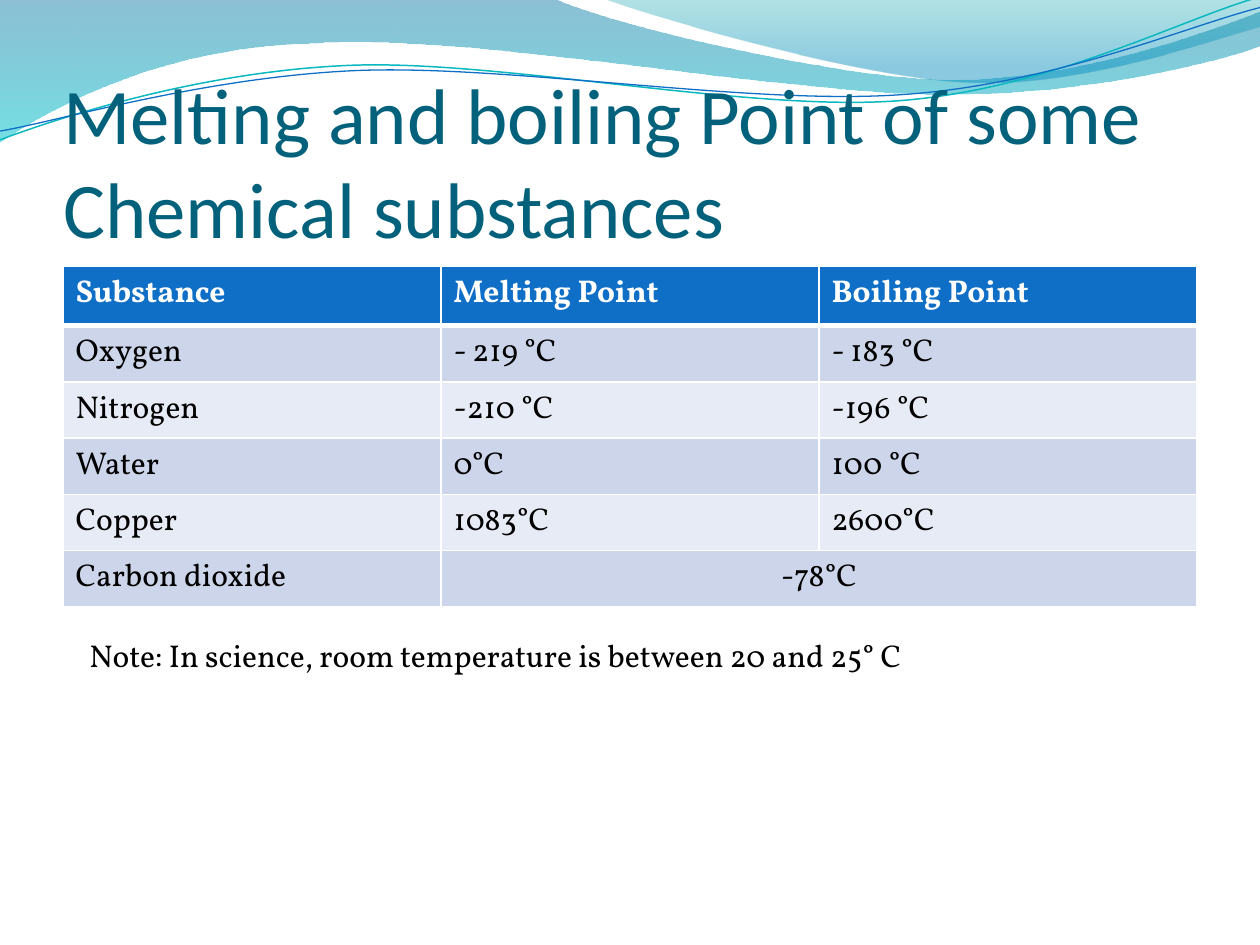
from pptx import Presentation
from pptx.dml.color import RGBColor
from pptx.enum.text import MSO_ANCHOR as ANCHOR, MSO_AUTO_SIZE as AUTO, PP_ALIGN as ALIGN
from pptx.oxml.ns import qn
from pptx.util import Pt
from lxml.etree import SubElement

COLORS = {
    "wave_blue": "0074A1", "wave_cyan": "00C6CF",
    "crest_teal": "00A1A9", "crest_blue": "008BBF",
    "teal_line": "0AB8BF", "blue": "0F6FC6", "title": "04617B",
    "band_dark": "CCD5EA", "band_light": "E7EBF5",
    "white": "FFFFFF", "black": "000000",
}
BODY_FONT = "Vollkorn"

WAVE = [(-0.5, 0), (316.8, -0.7), (342.7, 12.2, 478.1, 45.4, 545.8, 45.4),
        (614.2, 45.4, 689.8, 18.7, 720, 6.5), (720.7, 25.9),
        (707.8, 31.7, 626.4, 54.7, 537.1, 54), (447.8, 54, 275, 20.2, 185, 24.5),
        (92.9, 25.9, 33.1, 59.8, -0.7, 81.4)]
CREST = [(344.9, -0.7), (366.5, 7.9, 491, 44.6, 553.7, 46.8),
         (616.3, 49.7, 691.9, 23, 720, 15.1), (720, 0)]
TEAL_LINE = [(0, 79.9), (34.6, 67, 113.8, 41, 199.4, 37.4),
             (284.4, 33.8, 427, 64.1, 513.4, 57.6), (599.8, 51.1, 675.4, 10.8, 718.6, -1.4)]
BLUE_LINE = [(0, 74.9), (33.8, 69.1, 118.1, 43.9, 203.8, 40.3),
             (290.2, 36.7, 429.8, 60.5, 516.2, 54), (601.9, 48.2, 677.5, 15.1, 720, 4.3)]

ROWS = [
    ("Substance", "Melting Point", "Boiling Point"),
    ("Oxygen", "- 219 °C", "- 183 °C"),
    ("Nitrogen", "-210 °C", "-196 °C"),
    ("Water", "0°C", "100 °C"),
    ("Copper", "1083°C", "2600°C"),
    ("Carbon dioxide", "-78°C"),
]


def rgb(name):
    return RGBColor.from_string(COLORS[name])


def bend(sp, steps):
    segments = list(sp._element.iter(qn("a:lnTo")))
    for segment, step in zip(segments, steps):
        if len(step) == 2:
            continue
        segment.tag = qn("a:cubicBezTo")
        for pt in list(segment):
            segment.remove(pt)
        for x, y in zip(step[::2], step[1::2]):
            SubElement(segment, qn("a:pt"), x=str(Pt(x) - sp.left), y=str(Pt(y) - sp.top))


def add_freeform(slide, path, close):
    anchors = [(Pt(step[-2]), Pt(step[-1])) for step in path]
    builder = slide.shapes.build_freeform(*anchors[0])
    builder.add_line_segments(anchors[1:], close=close)
    sp = builder.convert_to_shape()
    sp.shadow.inherit = False
    bend(sp, path[1:])
    return sp


def add_wave(slide, path, stops):
    sp = add_freeform(slide, path, True)
    sp.line.fill.background()
    sp.fill.gradient()
    sp.fill.gradient_angle = 270
    for stop, (position, color, opacity) in zip(sp.fill.gradient_stops, stops):
        stop.position = position
        stop.color.rgb = rgb(color)
    fills = sp._element.spPr.find(qn("a:gradFill")).iter(qn("a:srgbClr"))
    for clr, (position, color, opacity) in zip(fills, stops):
        SubElement(clr, qn("a:alpha")).set("val", str(opacity * 1000))


def add_curve(slide, path, color, width):
    sp = add_freeform(slide, path, False)
    sp.fill.background()
    sp.line.color.rgb = rgb(color)
    sp.line.width = Pt(width)


def write(tf, text, size, font, color, bold=False, align=ALIGN.LEFT):
    tf.text = text
    p = tf.paragraphs[0]
    p.alignment = align
    f = p.runs[0].font
    f.size, f.name, f.bold = Pt(size), font, bold
    f.color.rgb = rgb(color)


def add_text(slide, box, text, size, font, color):
    tf = slide.shapes.add_textbox(*map(Pt, box)).text_frame
    tf.word_wrap = True
    write(tf, text, size, font, color)
    return tf


def set_border(cell, side, width):
    ln = SubElement(cell._tc.get_or_add_tcPr(), qn(f"a:ln{side}"), w=str(Pt(width)))
    fill = SubElement(ln, qn("a:solidFill"))
    SubElement(fill, qn("a:srgbClr"), val=COLORS["white"])


def style_cell(cell, row):
    for side in "LRTB":
        heavy = (row == 0 and side == "B") or (row == 1 and side == "T")
        set_border(cell, side, 3 if heavy else 1)
    cell.fill.solid()
    band = "band_dark" if row % 2 else "band_light"
    cell.fill.fore_color.rgb = rgb(band if row else "blue")


def add_substances(slide):
    table = slide.shapes.add_table(len(ROWS), 3, Pt(36), Pt(152), Pt(648), Pt(195)).table
    for r, texts in enumerate(ROWS):
        table.rows[r].height = Pt(32.2 if r else 34)
        for cell in table.rows[r].cells:
            style_cell(cell, r)
        merged = len(texts) < 3
        if merged:
            table.cell(r, 1).merge(table.cell(r, 2))
        for c, text in enumerate(texts):
            align = ALIGN.CENTER if merged and c else ALIGN.LEFT
            write(table.cell(r, c).text_frame, text, 18, BODY_FONT,
                  "black" if r else "white", r == 0, align)


def main():
    prs = Presentation()
    prs.slide_width, prs.slide_height = Pt(720), Pt(540)
    slide = prs.slides.add_slide(prs.slide_layouts[6])

    add_wave(slide, WAVE, [(0, "wave_blue", 45), (1, "wave_cyan", 55)])
    add_wave(slide, CREST, [(0, "crest_teal", 30), (0.8, "crest_blue", 45)])
    add_curve(slide, TEAL_LINE, "teal_line", 0.85)
    add_curve(slide, BLUE_LINE, "blue", 0.75)

    title = add_text(slide, (36.3, 55.5, 648, 90),
                     "Melting and boiling Point of some Chemical substances",
                     45, "Calibri", "title")
    title.vertical_anchor = ANCHOR.BOTTOM
    title.margin_left = title.margin_right = title.margin_bottom = 0

    add_substances(slide)
    note = add_text(slide, (44, 360, 612, 29),
                    "Note: In science, room temperature is between 20 and 25° C",
                    18, BODY_FONT, "black")
    note.auto_size = AUTO.SHAPE_TO_FIT_TEXT
    prs.save("out.pptx")


if __name__ == "__main__":
    main()
